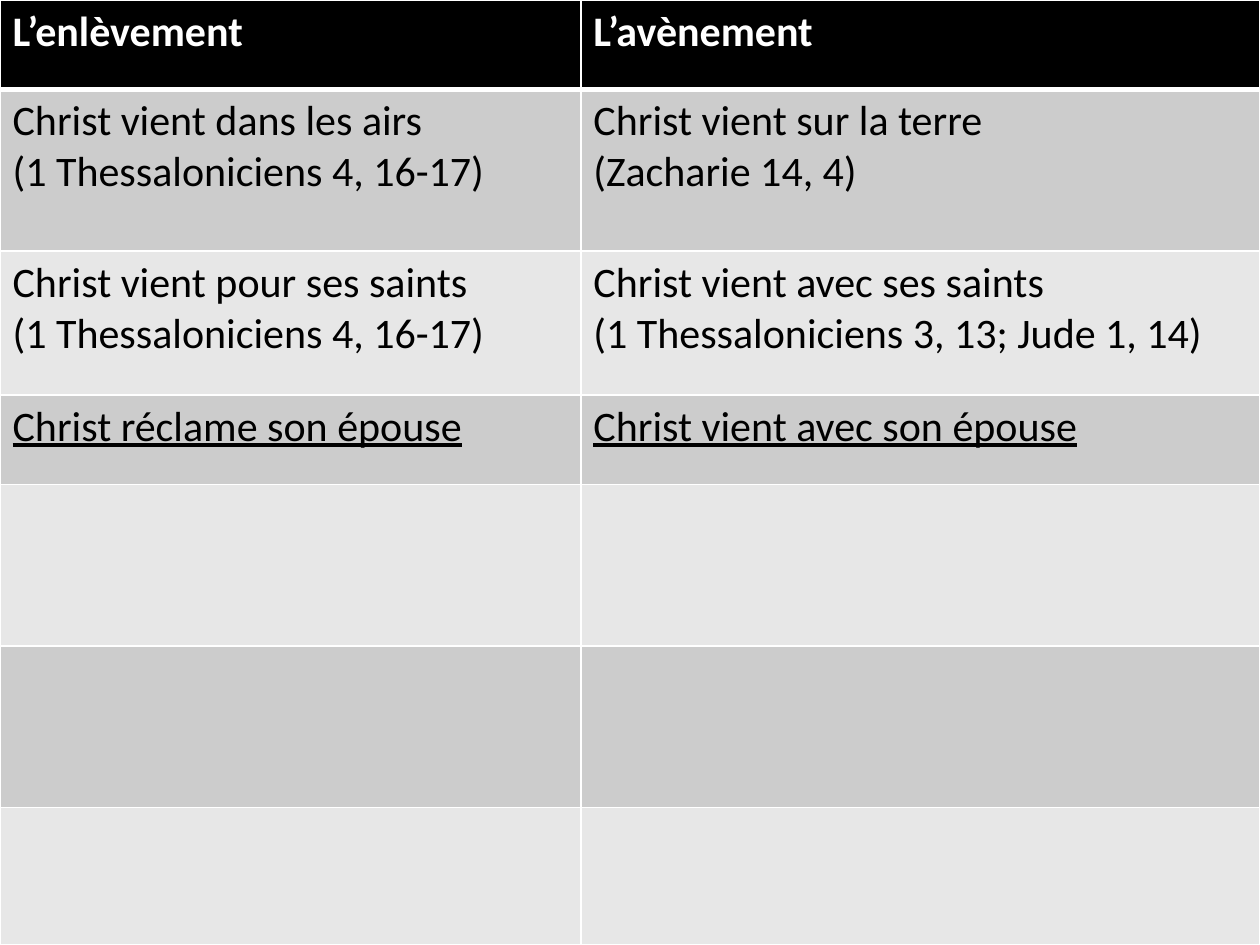
import pptx
import pptx.dml.color
import pptx.oxml
import pptx.oxml.ns
import pptx.util
from pptx.util import Inches, Pt

RGBColor = pptx.dml.color.RGBColor
BLACK = RGBColor(0x00, 0x00, 0x00)
WHITE = RGBColor(0xFF, 0xFF, 0xFF)
DARK_BAND = RGBColor(0xCC, 0xCC, 0xCC)
LIGHT_BAND = RGBColor(0xE7, 0xE7, 0xE7)

COLUMN_WIDTHS = [4.61, 5.39]
ROW_HEIGHTS = [0.71, 1.28, 1.14, 0.71, 1.28, 1.28, 1.09]
UNDERLINED_ROW = 3
COMPARISON = [
    ("L’enlèvement", "L’avènement"),
    ("Christ vient dans les airs\n(1 Thessaloniciens 4, 16-17)",
     "Christ vient sur la terre\n(Zacharie 14, 4)"),
    ("Christ vient pour ses saints\n(1 Thessaloniciens 4, 16-17)",
     "Christ vient avec ses saints\n(1 Thessaloniciens 3, 13; Jude 1, 14)"),
    ("Christ réclame son épouse", "Christ vient avec son épouse"),
    ("", ""),
    ("", ""),
    ("", ""),
]


def add_borders(cell, top, bottom):
    """Draw white cell borders; top and bottom are widths in points."""
    properties = cell._tc.get_or_add_tcPr()
    for side, width in (("L", 1), ("R", 1), ("T", top), ("B", bottom)):
        properties.append(pptx.oxml.parse_xml(
            f'<a:ln{side} {pptx.oxml.ns.nsdecls("a")} w="{Pt(width)}">'
            f'<a:solidFill><a:srgbClr val="{WHITE}"/></a:solidFill>'
            f'</a:ln{side}>'))


def format_cell(cell, text, row_index):
    is_header = row_index == 0
    add_borders(cell, top=3 if row_index == 1 else 1, bottom=3 if is_header else 1)
    cell.fill.solid()
    band = DARK_BAND if row_index % 2 else LIGHT_BAND
    cell.fill.fore_color.rgb = BLACK if is_header else band
    if not text:
        return
    cell.text = text
    for para in cell.text_frame.paragraphs:
        para.font.name = "Calibri"
        para.font.size = Pt(24)
        para.font.bold = is_header
        para.font.color.rgb = WHITE if is_header else BLACK
        if row_index == UNDERLINED_ROW:
            para.font.underline = True


def add_comparison_table(page, left, top, width, height):
    table = page.shapes.add_table(
        len(ROW_HEIGHTS), len(COLUMN_WIDTHS), left, top, width, height).table
    for column, share in zip(table.columns, COLUMN_WIDTHS):
        column.width = int(width * share / sum(COLUMN_WIDTHS))
    for row, share in zip(table.rows, ROW_HEIGHTS):
        row.height = int(height * share / sum(ROW_HEIGHTS))
    for row_index, texts in enumerate(COMPARISON):
        for column_index, text in enumerate(texts):
            format_cell(table.cell(row_index, column_index), text, row_index)


def main():
    deck = pptx.Presentation()
    deck.slide_width, deck.slide_height = Inches(10), Inches(7.5)
    page = deck.slides.add_slide(deck.slide_layouts.get_by_name("Blank"))
    add_comparison_table(page, 0, 0, deck.slide_width, deck.slide_height)
    deck.save("out.pptx")


if __name__ == "__main__":
    main()
